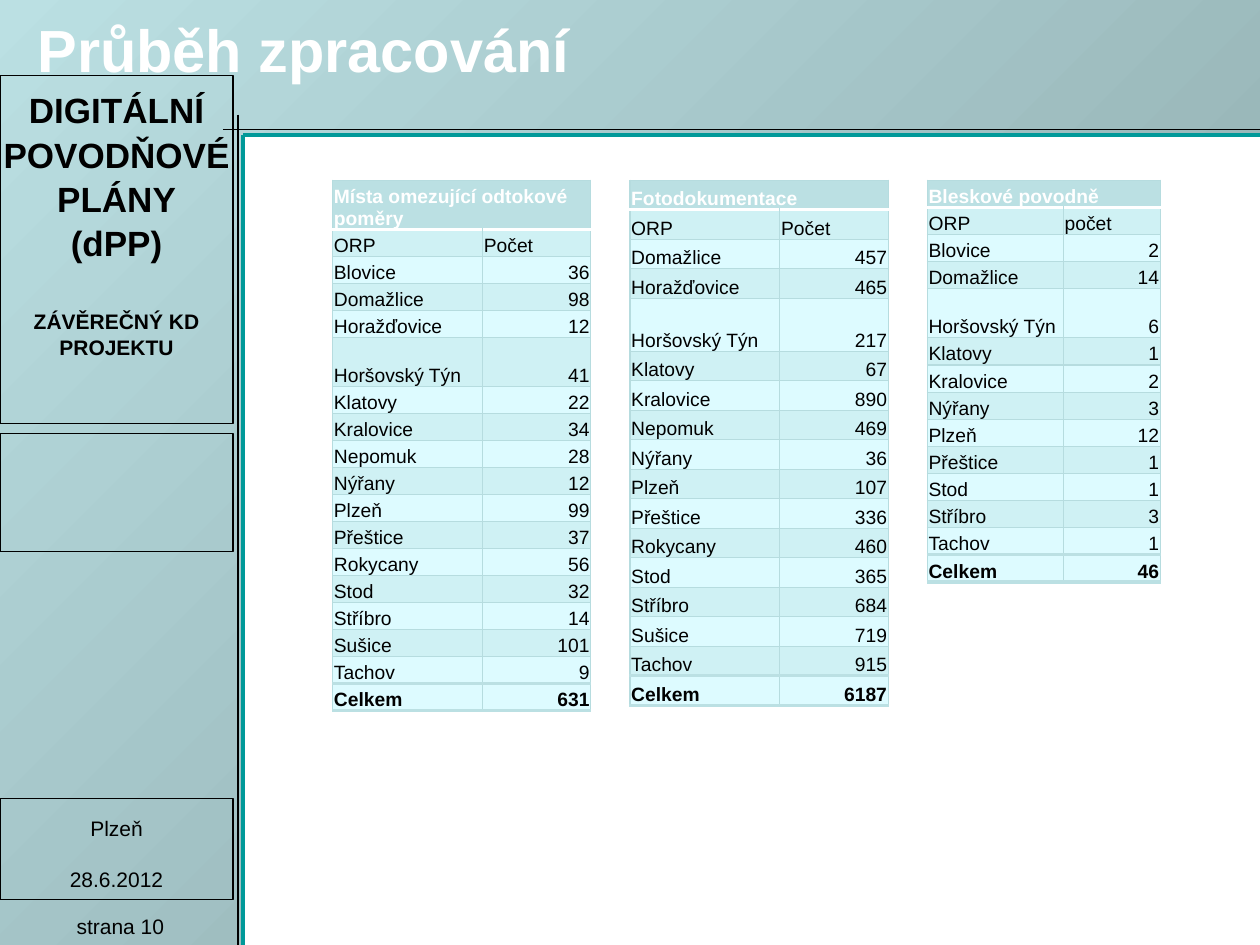
from dataclasses import dataclass

from lxml import etree
from pptx import Presentation, util as u
from pptx.dml.color import RGBColor
from pptx.enum import shapes, text
from pptx.oxml import ns


@dataclass(frozen=True)
class Theme:
    font: str = "Arial"
    black: str = "000000"
    white: str = "FFFFFF"
    accent: str = "009999"
    gradient: tuple[str, str] = ("BBE0E3", "86A0A2")
    header: str = "BBE0E3"
    band: str = "CFF1F4"
    plain: str = "DDFBFF"
    grid: str = "B6DCDF"
    title: float = 34
    project: float = 20
    small: float = 12
    cell: float = 11
    thin: float = 0.75
    rule: float = 2.25
    strong: float = 2


@dataclass(frozen=True)
class Box:
    """Area measured in grid columns and rows."""
    left: float
    top: float
    width: float
    height: float

    def emu(self) -> tuple[int, ...]:
        return tuple(map(grid, (self.left, self.top, self.width, self.height)))


@dataclass(frozen=True)
class Summary:
    title: str
    count_label: str
    area: Box
    name_width: float
    head_rows: float | None  # None: same height as an ordinary row
    tall_rows: float
    counts: dict[str, int]
    tall_name: str = "Horšovský Týn"


THEME = Theme()
LEFT, CENTER, RIGHT = text.PP_ALIGN.LEFT, text.PP_ALIGN.CENTER, text.PP_ALIGN.RIGHT

# The slide is a grid of 100 columns by 75 square rows
prs = Presentation()
prs.slide_width, prs.slide_height = u.Inches(10), u.Inches(7.5)
COLUMNS, ROWS = 100, 75
slide = prs.slides.add_slide(prs.slide_layouts[6])


def grid(cells: float) -> int:
    return round(prs.slide_width * cells / COLUMNS)


def rgb(code: str) -> RGBColor:
    return RGBColor.from_string(code)


def write(frame, *lines: str, sizes: tuple = (THEME.small,), color: str = THEME.black,
          bold: bool = False, align=LEFT, before: dict[int, float] | None = None,
          spacing: float | None = None) -> None:
    """Write one paragraph per line; the last size serves the remaining lines."""
    for index, line in enumerate(lines):
        paragraph = frame.paragraphs[0] if index == 0 else frame.add_paragraph()
        paragraph.alignment = align
        if spacing:
            paragraph.line_spacing = spacing
        if before and index in before:
            paragraph.space_before = u.Pt(before[index])
        run = paragraph.add_run()
        run.text = line
        run.font.name, run.font.bold = THEME.font, bold
        run.font.size = u.Pt(sizes[min(index, len(sizes) - 1)])
        run.font.color.rgb = rgb(color)


def label(box: Box, *lines: str, wrap: bool = True, inset_top: float = 0.5, **style) -> None:
    frame = slide.shapes.add_textbox(*box.emu()).text_frame
    frame.word_wrap = wrap
    frame.margin_top = grid(inset_top)
    write(frame, *lines, **style)


def rule(x1: float, y1: float, x2: float, y2: float, color: str, width: float) -> None:
    line = slide.shapes.add_connector(shapes.MSO_CONNECTOR.STRAIGHT, *map(grid, (x1, y1, x2, y2)))
    line.line.color.rgb, line.line.width = rgb(color), u.Pt(width)
    etree.SubElement(line._element.spPr, ns.qn("a:effectLst"))


def panel(box: Box) -> None:
    frame = slide.shapes.add_shape(shapes.MSO_SHAPE.RECTANGLE, *box.emu())
    frame.shadow.inherit = False
    frame.fill.background()
    frame.line.color.rgb, frame.line.width = rgb(THEME.black), u.Pt(THEME.thin)


def border(cell, **edges: tuple[str, float]) -> None:
    """Draw all four edges, thin unless given as L, R, T or B."""
    properties = cell._tc.get_or_add_tcPr()
    for side in "LRTB":
        color, width = edges.get(side, (THEME.grid, THEME.thin))
        line = etree.SubElement(properties, ns.qn(f"a:ln{side}"), w=str(u.Pt(width)))
        fill = etree.SubElement(line, ns.qn("a:solidFill"))
        etree.SubElement(fill, ns.qn("a:srgbClr"), val=color)


def add_summary(summary: Summary) -> None:
    rows = [(summary.title, ""), ("ORP", summary.count_label),
            *((name, str(count)) for name, count in summary.counts.items()),
            ("Celkem", str(sum(summary.counts.values())))]
    last = len(rows) - 1
    table = slide.shapes.add_table(len(rows), 2, *summary.area.emu()).table
    table.first_row = table.horz_banding = False
    table.columns[0].width = grid(summary.name_width)
    table.columns[1].width = grid(summary.area.width - summary.name_width)

    # Ordinary rows share what the taller rows leave
    special = {i: summary.tall_rows for i, row in enumerate(rows) if row[0] == summary.tall_name}
    if summary.head_rows:
        special[0] = summary.head_rows
    ordinary = (summary.area.height - sum(special.values())) / (len(rows) - len(special))

    white_edge, total_edge = (THEME.white, THEME.strong), (THEME.header, THEME.strong)
    edges = {0: {"B": white_edge}, 1: {"T": white_edge}, last - 1: {"B": total_edge},
             last: {"T": total_edge, "B": total_edge}}
    table.cell(0, 0).merge(table.cell(0, 1))
    for i, row in enumerate(rows):
        table.rows[i].height = grid(special.get(i, ordinary))
        if i == 0:
            fill = THEME.header
        else:
            fill = THEME.band if i % 2 and i != last else THEME.plain
        for j, content in enumerate(row):
            cell = table.cell(i, j)
            cell.margin_left = cell.margin_right = cell.margin_top = grid(0.1)
            cell.margin_bottom = 0
            cell.vertical_anchor = text.MSO_ANCHOR.BOTTOM
            border(cell, **edges.get(i, {}))
            cell.fill.solid()
            cell.fill.fore_color.rgb = rgb(fill)
            if content:
                write(cell.text_frame, content, sizes=(THEME.cell,), bold=i in (0, last),
                      color=THEME.white if i == 0 else THEME.black,
                      align=RIGHT if j and i > 1 else LEFT)


# Gradient band along the left and top edges, with a small bleed
SIDE, TOP, BLEED = 19.3, 10.8, 0.3
outline = [(SIDE, ROWS + BLEED), (SIDE, TOP), (COLUMNS + BLEED, TOP),
           (COLUMNS + BLEED, -BLEED), (-BLEED, -BLEED)]
builder = slide.shapes.build_freeform(grid(-BLEED), grid(ROWS + BLEED))
builder.add_line_segments([(grid(x), grid(y)) for x, y in outline])
band = builder.convert_to_shape()
band.shadow.inherit = False
band.line.fill.background()
band.fill.gradient()
band.fill.gradient_angle = 315
for stop, position, shade in zip(band.fill.gradient_stops, (0, 1), THEME.gradient):
    stop.position, stop.color.rgb = position, rgb(shade)

# Sidebar texts
label(Box(-1, 6.4, 20.5, 22), "DIGITÁLNÍ POVODŇOVÉ PLÁNY", "(dPP)", "ZÁVĚREČNÝ KD PROJEKTU",
      sizes=(THEME.project, THEME.project, THEME.small), bold=True, align=CENTER,
      before={2: 25}, spacing=1.05)
label(Box(-0.6, 61.9, 19.7, 9.2), "Plzeň", "28.6.2012", align=CENTER, before={1: 14.7},
      inset_top=2.8)
label(Box(5.1, 72.2, 9.1, 2.8), "strana 10", wrap=False, spacing=0.9)

# Rules and sidebar panels
rule(SIDE, ROWS, SIDE, 10.7, THEME.accent, THEME.rule)
rule(SIDE, 10.7, COLUMNS, 10.7, THEME.accent, THEME.rule)
rule(18.9, 9.1, 18.9, ROWS, THEME.black, THEME.thin)
rule(17.7, 10.3, COLUMNS, 10.3, THEME.black, THEME.thin)
for panel_top, panel_height in ((6, 27.6), (34.4, 9.4), (63.4, 8)):
    panel(Box(0, panel_top, 18.5, panel_height))

# Title
label(Box(2, 0, 93.3, 6.7), "Průběh zpracování", sizes=(THEME.title,), color=THEME.white,
      bold=True, inset_top=1)

# Summary tables
for item in (
    Summary("Místa omezující odtokové poměry", "Počet", Box(26.4, 14.3, 20.5, 42.1), 11.9, 3.9, 3.9,
            {"Blovice": 36, "Domažlice": 98, "Horažďovice": 12, "Horšovský Týn": 41,
             "Klatovy": 22, "Kralovice": 34, "Nepomuk": 28, "Nýřany": 12, "Plzeň": 99,
             "Přeštice": 37, "Rokycany": 56, "Stod": 32, "Stříbro": 14, "Sušice": 101,
             "Tachov": 9}),
    Summary("Fotodokumentace", "Počet", Box(50, 14.3, 20.5, 41.7), 11.9, None, 4.2,
            {"Domažlice": 457, "Horažďovice": 465, "Horšovský Týn": 217, "Klatovy": 67,
             "Kralovice": 890, "Nepomuk": 469, "Nýřany": 36, "Plzeň": 107, "Přeštice": 336,
             "Rokycany": 460, "Stod": 365, "Stříbro": 684, "Sušice": 719, "Tachov": 915}),
    Summary("Bleskové povodně", "počet", Box(73.6, 14.3, 18.5, 31.9), 10.8, None, 3.9,
            {"Blovice": 2, "Domažlice": 14, "Horšovský Týn": 6, "Klatovy": 1, "Kralovice": 2,
             "Nýřany": 3, "Plzeň": 12, "Přeštice": 1, "Stod": 1, "Stříbro": 3, "Tachov": 1}),
):
    add_summary(item)

prs.save("out.pptx")
